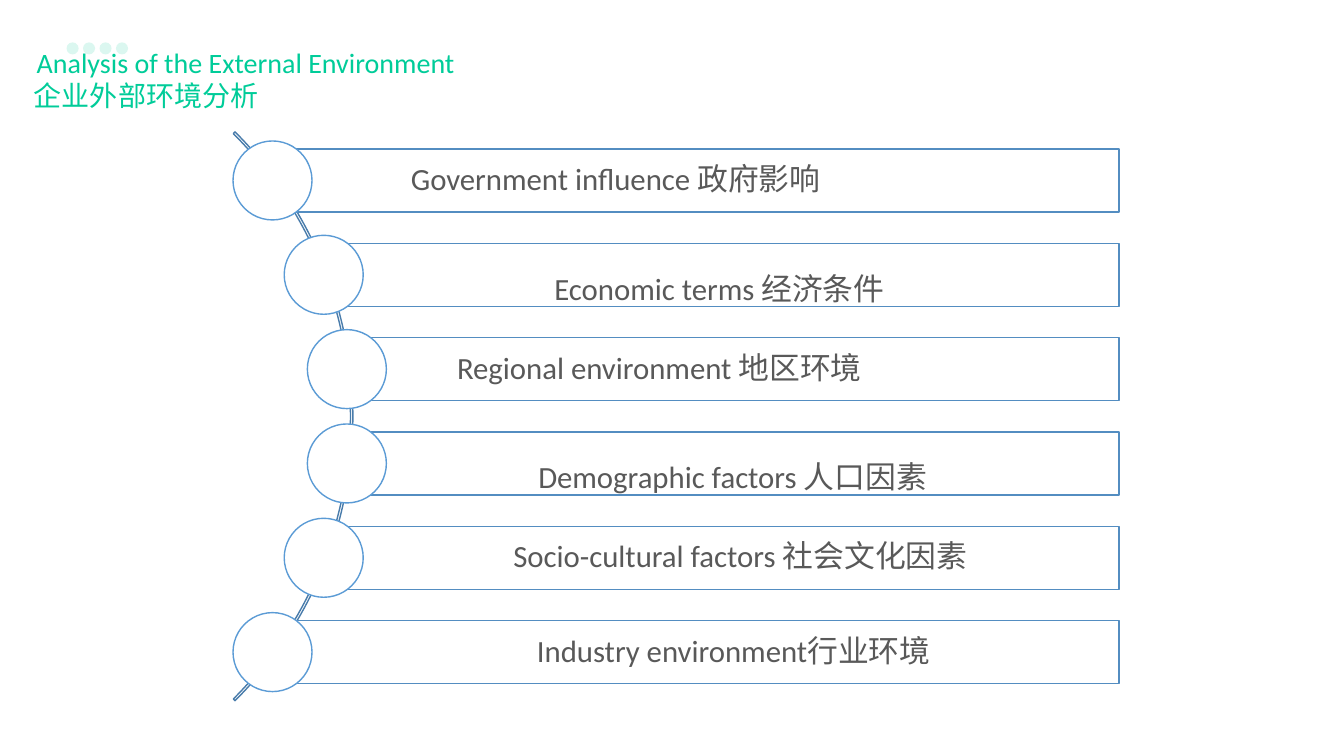
from dataclasses import dataclass
from math import sqrt

from lxml.etree import SubElement
from pptx import Presentation
from pptx.dml.color import RGBColor
from pptx.enum.shapes import MSO_SHAPE
from pptx.enum.text import MSO_ANCHOR, PP_ALIGN
from pptx.oxml.ns import qn
from pptx.util import Inches, Pt

CELL = Inches(7.5) / 90  # square grid: 160 columns by 90 rows


@dataclass(frozen=True)
class Theme:
    accent: RGBColor = RGBColor(0x00, 0xCC, 0x99)
    ink: RGBColor = RGBColor(0x59, 0x59, 0x59)
    paper: RGBColor = RGBColor(0xFF, 0xFF, 0xFF)
    arc_line: RGBColor = RGBColor(0x49, 0x7C, 0xAB)
    bar_line: RGBColor = RGBColor(0x53, 0x8D, 0xC1)
    circle_line: RGBColor = RGBColor(0x5B, 0x9B, 0xD5)
    latin: str = "Calibri"
    chinese: str = "Noto Sans CJK SC"
    title_size: int = 20
    label_size: int = 22


THEME = Theme()

ARC_X, ARC_Y, ARC_RADIUS = -5.88, 49.56, 47.88
CIRCLE_ORBIT = 47.5
CIRCLE = 9.4
PITCH = 11.23
BAR_HEIGHT = 7.5
BAR_RIGHT = 133.2
BAR_SHIFT = 0.8  # from circle centre to the left edge of its bar

# Text and the column where it starts; None marks a label in its own box.
FACTORS = [
    ("Government influence 政府影响", 48.9),
    ("Economic terms 经济条件", None),
    ("Regional environment 地区环境", 54.4),
    ("Demographic factors 人口因素", None),
    ("Socio-cultural factors 社会文化因素", 61.1),
    ("Industry environment行业环境", 63.9),
]
# Left column, width and alignment of the labels in their own boxes
LOOSE_BOXES = {1: (64.8, 56.64, PP_ALIGN.LEFT), 3: (51.3, 71.76, PP_ALIGN.CENTER)}


def cells(*counts):
    return [round(count * CELL) for count in counts]


def add_outline(page, preset, place, line=None, fill=None):
    shape = page.shapes.add_shape(preset, *cells(*place))
    shape.shadow.inherit = False
    if fill is None:
        shape.fill.background()
    else:
        shape.fill.solid()
        shape.fill.fore_color.rgb = fill
    if line is None:
        shape.line.fill.background()
    else:
        shape.line.color.rgb = line
        shape.line.width = Pt(1)
    return shape


def add_text(page, place, text, size, color):
    box = page.shapes.add_textbox(*cells(*place))
    frame = box.text_frame
    frame.word_wrap = True
    frame.text = text
    for para in frame.paragraphs:
        for span in para.runs:
            span.font.size = Pt(size)
            span.font.name = THEME.latin
            span.font.color.rgb = color
            east_asian = SubElement(span.font._element, qn("a:ea"))
            east_asian.set("typeface", THEME.chinese)
    return frame


def add_title(page):
    frame = add_text(page, (0.7, 4.8, 57.1, 9.2),
                     "Analysis of the External Environment\n企业外部环境分析",
                     THEME.title_size, THEME.accent)
    english, chinese = frame.paragraphs
    english.alignment = PP_ALIGN.CENTER
    chinese._p.get_or_add_pPr().set("marL", str(Inches(0.18)))


def add_dots(page):
    for index in range(4):
        dot = add_outline(page, MSO_SHAPE.OVAL, (7.92 + 1.96 * index, 5.04, 1.44, 1.44),
                          fill=THEME.accent)
        color = dot.fill._xPr.find(qn("a:solidFill"))[0]
        SubElement(color, qn("a:alpha")).set("val", "14000")


def add_arc(page):
    diameter = 2 * ARC_RADIUS
    arc = add_outline(page, MSO_SHAPE.BLOCK_ARC,
                      (ARC_X - ARC_RADIUS, ARC_Y - ARC_RADIUS, diameter, diameter),
                      line=THEME.arc_line)
    for index, value in enumerate((189, 27, 0.003)):
        arc.adjustments[index] = value


def add_bar_label(page, place, text, start):
    frame = add_text(page, place, text, THEME.label_size, THEME.ink)
    frame.vertical_anchor = MSO_ANCHOR.MIDDLE
    frame.margin_left = cells(start - place[0])[0]
    frame.margin_top = frame.margin_right = frame.margin_bottom = Inches(0.06)
    frame.paragraphs[0].line_spacing = 0.9


def add_loose_label(page, top, text, left, width, alignment):
    frame = add_text(page, (left, top, width, 7.1), text, THEME.label_size, THEME.ink)
    frame.paragraphs[0].alignment = alignment
    frame.paragraphs[0].line_spacing = 1.5


def add_factor(page, index, text, start):
    """Draw a bar with its circle, centred on the arc."""
    offset = (index - (len(FACTORS) - 1) / 2) * PITCH
    center_x = ARC_X + sqrt(CIRCLE_ORBIT ** 2 - offset ** 2)
    center_y = ARC_Y + offset
    left = center_x + BAR_SHIFT
    top = center_y - BAR_HEIGHT / 2
    bar = (left, top, BAR_RIGHT - left, BAR_HEIGHT)
    add_outline(page, MSO_SHAPE.RECTANGLE, bar, THEME.bar_line, THEME.paper)
    if start is None:
        add_loose_label(page, top + 0.3, text, *LOOSE_BOXES[index])
    else:
        add_bar_label(page, bar, text, start)
    add_outline(page, MSO_SHAPE.OVAL,
                (center_x - CIRCLE / 2, center_y - CIRCLE / 2, CIRCLE, CIRCLE),
                THEME.circle_line, THEME.paper)


def main():
    deck = Presentation()
    deck.slide_width, deck.slide_height = Inches(13.33), Inches(7.5)
    page = deck.slides.add_slide(deck.slide_layouts[6])
    add_title(page)
    add_dots(page)
    add_arc(page)
    for index, (text, start) in enumerate(FACTORS):
        add_factor(page, index, text, start)
    deck.save("out.pptx")


if __name__ == "__main__":
    main()
